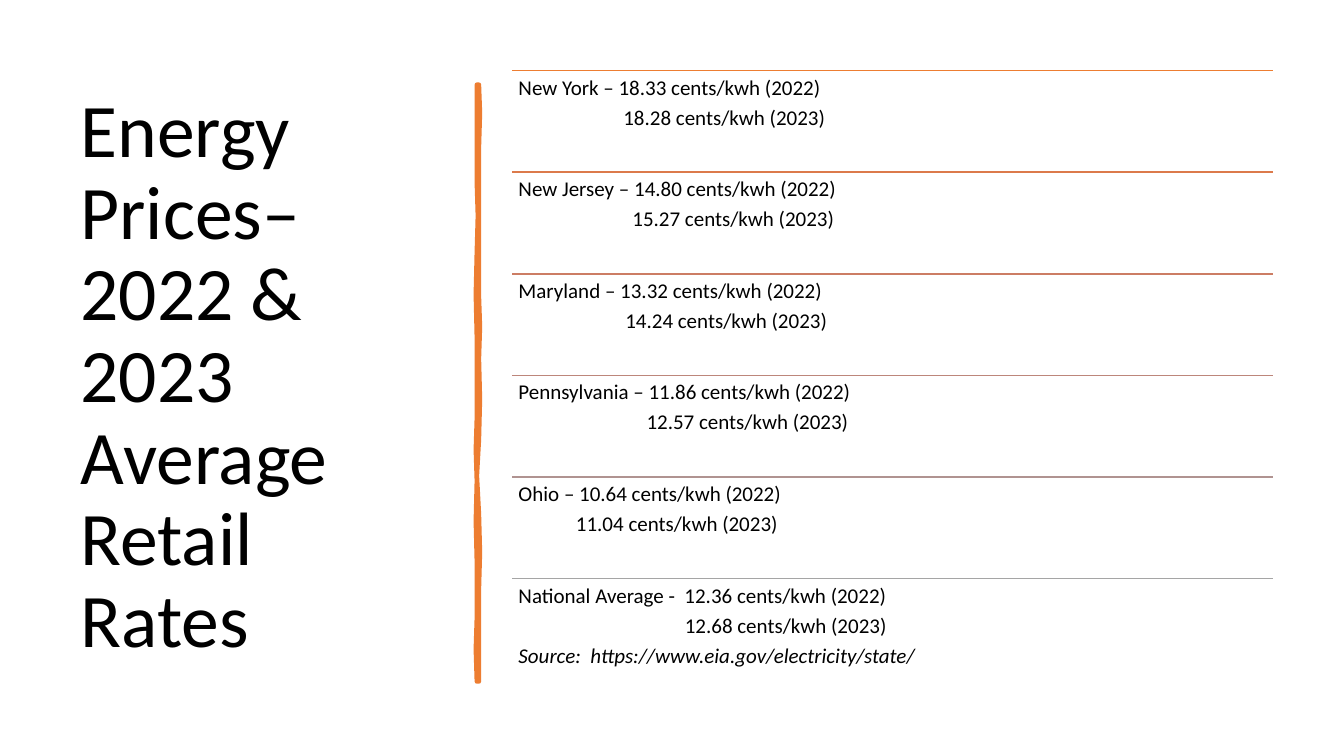
from lxml.etree import SubElement
from pptx import Presentation
from pptx.dml.color import RGBColor
from pptx.enum.shapes import MSO_CONNECTOR
from pptx.enum.text import MSO_ANCHOR, MSO_AUTO_SIZE, PP_ALIGN
from pptx.oxml.ns import qn
from pptx.util import Inches, Pt

FONT = "Calibri"
TITLE = "Energy Prices– 2022 & 2023 Average Retail Rates"
SOURCE = "Source:  https://www.eia.gov/electricity/state/"
RATES = [
    ("New York – ", "18.33", "18.28", 1.04, "ED7D31"),
    ("New Jersey – ", "14.80", "15.27", 1.13, "DC7A4B"),
    ("Maryland – ", "13.32", "14.24", 1.06, "CC7D64"),
    ("Pennsylvania – ", "11.86", "12.57", 1.27, "BD867B"),
    ("Ohio – ", "10.64", "11.04", 0.57, "B09391"),
    ("National Average -  ", "12.36", "12.68", 1.65, "A5A5A5"),
]
BRUSH_OUTLINE = [
    (0.05, 0), (0.06, 0.28), (0.05, 0.62), (0.05, 1.02), (0.05, 1.42),
    (0.05, 2.1), (0.06, 2.4), (0.05, 2.72), (0.06, 3.12), (0.05, 3.52),
    (0.03, 3.88), (0.05, 4.26), (0.06, 4.64), (0.05, 5), (0.05, 5.42),
    (0.05, 5.92), (0.03, 5.92), (0.02, 5.6), (0.03, 5.29), (0.03, 4.73),
    (0.02, 4.33), (0.03, 3.93), (0.02, 3.62), (0.03, 3.31), (0.03, 2.91),
    (0.03, 2.51), (0.02, 2.08), (0.03, 1.66), (0.04, 1.3), (0.03, 0.97),
    (0.03, 0.48), (0.03, 0),
]


def color(value):
    return RGBColor.from_string(value)


def format_paragraph(p, size, italic=False):
    p.alignment = PP_ALIGN.LEFT
    p.line_spacing = 0.9
    p.font.name = FONT
    p.font.size = Pt(size)
    p.font.italic = italic
    p.font.color.rgb = color("000000")


def add_title(s, left, top, width, height):
    sp = s.shapes.title
    sp.left, sp.top = Inches(left), Inches(top)
    sp.width, sp.height = Inches(width), Inches(height)
    tf = sp.text_frame
    tf.text = TITLE
    tf.word_wrap = True
    tf.auto_size = MSO_AUTO_SIZE.NONE
    tf.vertical_anchor = MSO_ANCHOR.MIDDLE
    format_paragraph(tf.paragraphs[0], 54)


def add_brush_divider(s, left, top):
    points = [(Inches(left + x), Inches(top + y)) for x, y in BRUSH_OUTLINE]
    builder = s.shapes.build_freeform(*points[0])
    builder.add_line_segments(points[1:], close=True)
    sp = builder.convert_to_shape()
    sp.shadow.inherit = False
    sp.fill.solid()
    sp.fill.fore_color.rgb = color("ED7D31")
    sp.line.color.rgb = color("ED7D31")
    sp.line.width = Pt(3.25)
    SubElement(sp._element.spPr.find(qn("a:ln")), qn("a:round"))


def add_rule(s, left, top, width, value):
    line = s.shapes.add_connector(
        MSO_CONNECTOR.STRAIGHT,
        Inches(left), Inches(top), Inches(left + width), Inches(top),
    )
    line.line.color.rgb = color(value)
    line.line.width = Pt(1)
    SubElement(line._element.spPr, qn("a:effectLst"))


def add_rate(s, left, top, width, height, lines, indent):
    sp = s.shapes.add_textbox(Inches(left), Inches(top), Inches(width), Inches(height))
    tf = sp.text_frame
    tf.word_wrap = True
    tf.margin_left = tf.margin_right = tf.margin_top = tf.margin_bottom = Pt(4.5)
    for i, text in enumerate(lines):
        p = tf.paragraphs[0] if i == 0 else tf.add_paragraph()
        p.text = text
        format_paragraph(p, 15, italic=text == SOURCE)
        p.space_after = Pt(5.25)
        if i == 1:
            p._p.get_or_add_pPr().set("marL", str(Inches(indent)))


def add_rates(s, left, top, width, height):
    step = height / len(RATES)
    for i, (place, old, new, indent, value) in enumerate(RATES):
        y = top + i * step
        lines = [f"{place}{old} cents/kwh (2022)", f"{new} cents/kwh (2023)"]
        if i == len(RATES) - 1:
            lines.append(SOURCE)
        add_rule(s, left, y, width, value)
        add_rate(s, left, y, width, step, lines, indent)


def main():
    prs = Presentation()
    prs.slide_width, prs.slide_height = Inches(13.33), Inches(7.5)
    s = prs.slides.add_slide(prs.slide_layouts[5])
    add_title(s, 0.7, 0.7, 3.74, 6.1)
    add_brush_divider(s, 4.7, 0.84)
    add_rates(s, 5.08, 0.7, 7.55, 6.05)
    prs.save("out.pptx")


if __name__ == "__main__":
    main()
